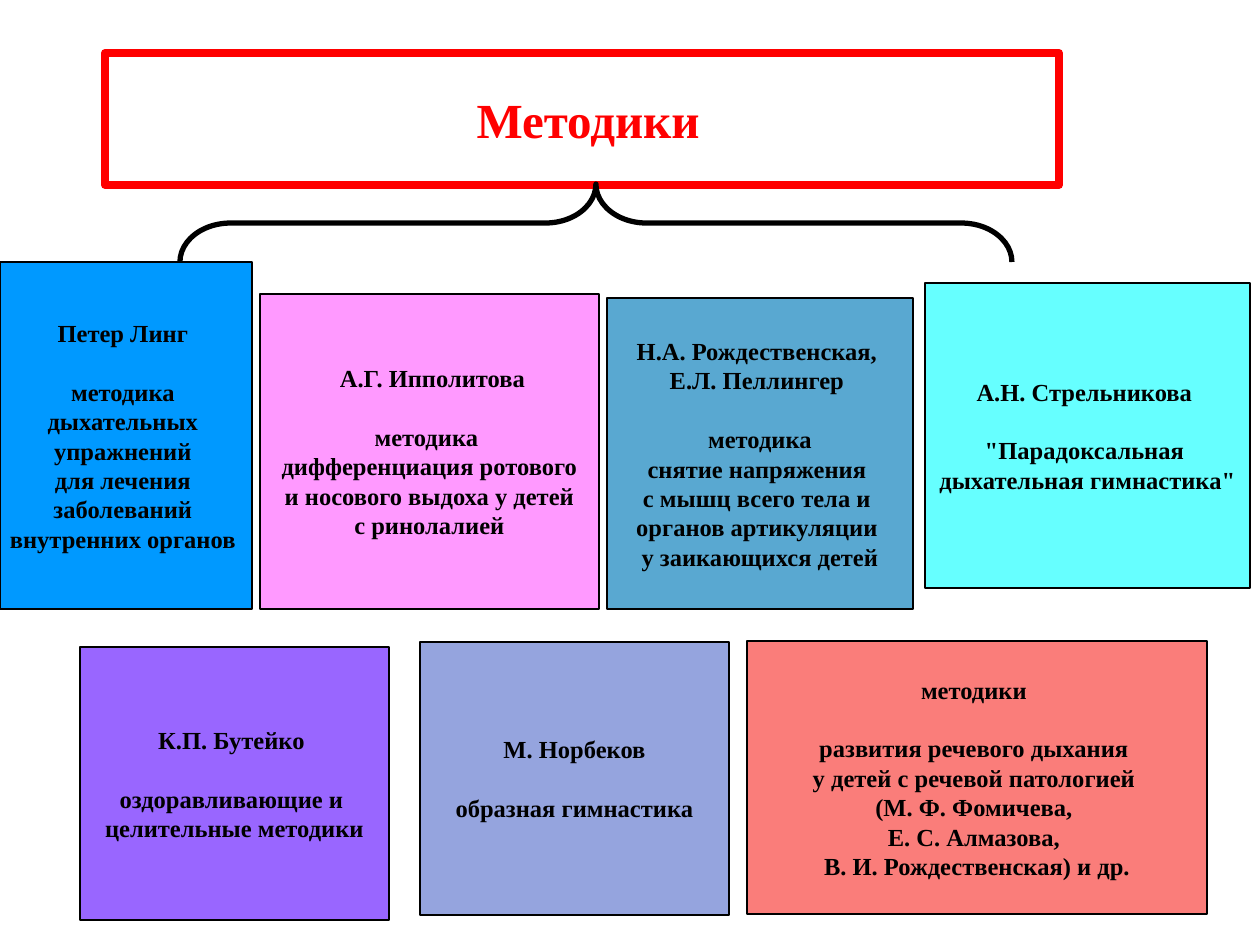
from typing import NamedTuple

from lxml.etree import SubElement
from pptx import Presentation
from pptx.dml.color import RGBColor
from pptx.enum.shapes import MSO_SHAPE
from pptx.enum.text import MSO_ANCHOR, PP_ALIGN
from pptx.oxml import parse_xml
from pptx.oxml.ns import nsdecls
from pptx.util import Pt

SCALE = 914400 / 126
FONT = "Times New Roman"
GAP = 16.8
COLORS = {
    "white": "FFFFFF", "black": "000000", "red": "FF0000", "blue": "0099FF",
    "cyan": "66FFFF", "pink": "FF99FF", "steel": "59A8D1",
    "violet": "9966FF", "lilac": "95A4DE", "coral": "FA7D7A",
}


class Area(NamedTuple):
    left: int
    top: int
    width: int
    height: int


class Card(NamedTuple):
    area: Area
    color: str
    head: list[str]
    body: list[str]


CARDS = [
    Card(Area(0, 262, 252, 347), "blue", ["Петер Линг "],
         ["методика ", "дыхательных ", "упражнений ", "для лечения ",
          "заболеваний ", "внутренних органов "]),
    Card(Area(925, 283, 325, 305), "cyan", ["А.Н. Стрельникова "],
         ['"Парадоксальная ', 'дыхательная гимнастика"']),
    Card(Area(260, 294, 339, 315), "pink", [" А.Г. Ипполитова"],
         ["методика ", "дифференциация ротового",
          " и носового выдоха у детей ", "с ринолалией"]),
    Card(Area(607, 298, 306, 311), "steel",
         ["Н.А. Рождественская, ", "Е.Л. Пеллингер "],
         ["методика", "снятие напряжения ", "с мышц всего тела и ",
          "органов артикуляции ", "у заикающихся детей"]),
    Card(Area(80, 647, 309, 273), "violet", ["К.П. Бутейко "],
         ["оздоравливающие и ", "целительные методики"]),
    Card(Area(420, 642, 309, 273), "lilac", ["М. Норбеков"],
         ["образная гимнастика"]),
    Card(Area(747, 641, 460, 273), "coral", ["методики "],
         ["развития речевого дыхания ", "у детей с речевой патологией ",
          "(М. Ф. Фомичева, ", "Е. С. Алмазова, ",
          "В. И. Рождественская) и др."]),
]


def px(size: float) -> int:
    return round(size * SCALE)


def hue(name: str) -> RGBColor:
    return RGBColor.from_string(COLORS[name])


def place(shape, area: Area) -> None:
    shape.left, shape.top, shape.width, shape.height = map(px, area)


def paint(shape, fill: str, edge: str, width: float) -> None:
    shape.fill.solid()
    shape.fill.fore_color.rgb = hue(fill)
    shape.line.color.rgb = hue(edge)
    shape.line.width = Pt(width)


def write(shape, lines: list[str], *, size: int, color: str = "black",
          wrap: bool = False, split: int = 0) -> None:
    frame = shape.text_frame
    frame.word_wrap = wrap
    frame.vertical_anchor = MSO_ANCHOR.MIDDLE
    for i, text in enumerate(lines):
        para = frame.add_paragraph() if i else frame.paragraphs[0]
        para.alignment = PP_ALIGN.CENTER
        para.space_before = Pt(GAP if split and i == split else 0)
        run = para.add_run()
        run.text = text
        run.font.name = FONT
        run.font.size = Pt(size)
        run.font.bold = True
        run.font.color.rgb = hue(color)


def draw_title(slide) -> None:
    title = slide.shapes.title
    place(title, Area(105, 53, 954, 132))
    title.element.spPr.append(parse_xml(
        f'<a:prstGeom {nsdecls("a")} prst="roundRect"><a:avLst/></a:prstGeom>'))
    paint(title, "white", "red", 4.5)
    write(title, [" Методики"], size=28, color="red", wrap=True)


def draw_brace(slide) -> None:
    area = Area(557, -193, 78, 832)
    brace = slide.shapes.add_shape(MSO_SHAPE.RIGHT_BRACE, *map(px, area))
    brace.shadow.inherit = False
    brace.rotation = 90
    brace.element.spPr.xfrm.set("flipH", "1")
    brace.adjustments[0] = 0.65
    brace.adjustments[1] = 0.5
    brace.fill.background()
    brace.line.color.rgb = hue("black")
    brace.line.width = Pt(3)


def draw_card(slide, card: Card) -> None:
    box = slide.shapes.add_shape(MSO_SHAPE.RECTANGLE, *map(px, card.area))
    box.shadow.inherit = False
    paint(box, card.color, "black", 0.75)
    write(box, card.head + card.body, size=14, split=len(card.head))


def main() -> None:
    deck = Presentation()
    deck.slide_width, deck.slide_height = px(1260), px(945)
    slide = deck.slides.add_slide(deck.slide_layouts[5])
    draw_title(slide)
    draw_brace(slide)
    for card in CARDS:
        draw_card(slide, card)
    deck.save("out.pptx")


if __name__ == "__main__":
    main()
